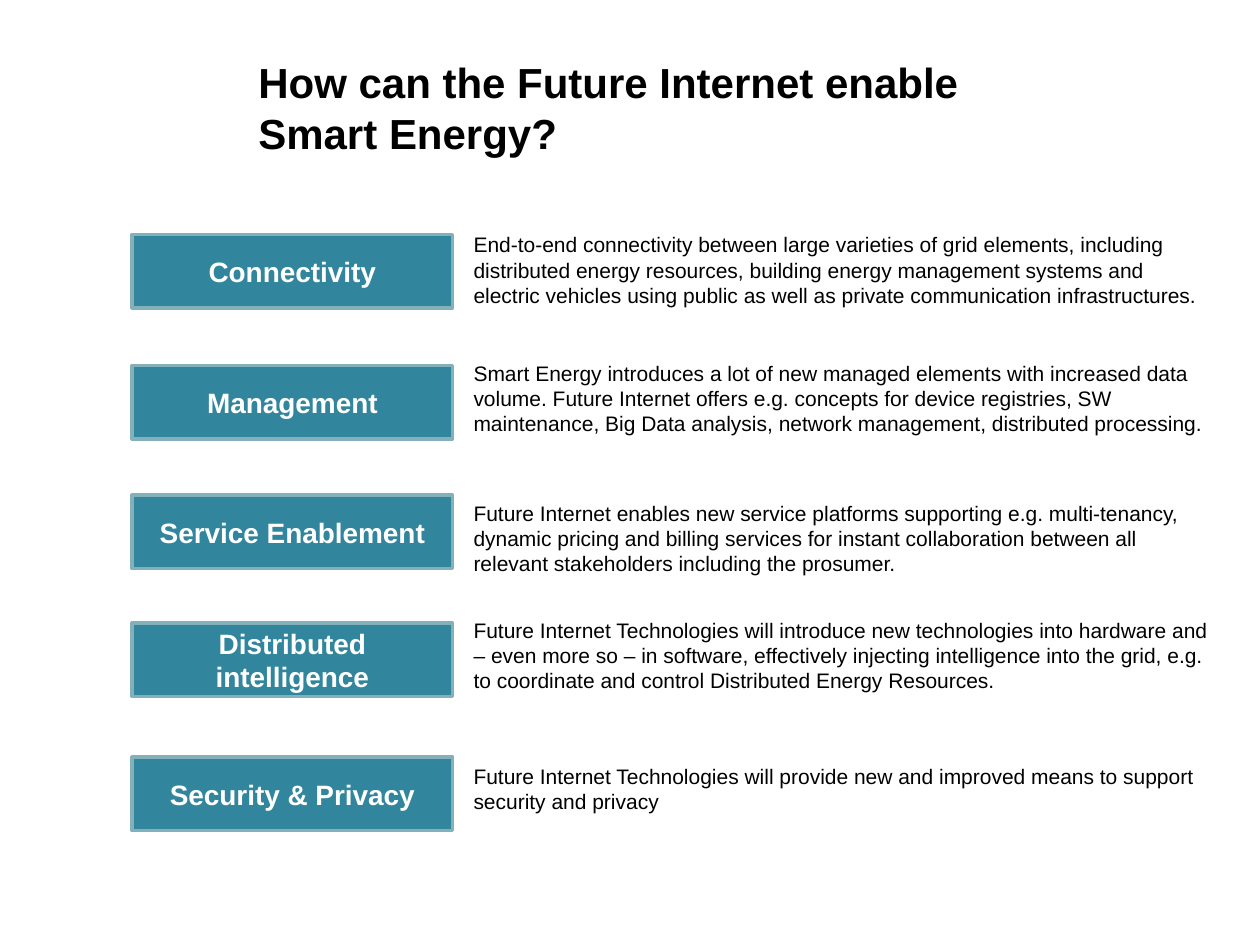
from pptx import Presentation
from pptx.dml.color import RGBColor
from pptx.enum.shapes import MSO_SHAPE
from pptx.enum.text import MSO_ANCHOR, MSO_AUTO_SIZE, PP_ALIGN
from pptx.util import Pt

RECTANGLE = MSO_SHAPE.RECTANGLE
TOP, MIDDLE = MSO_ANCHOR.TOP, MSO_ANCHOR.MIDDLE
LEFT, CENTER = PP_ALIGN.LEFT, PP_ALIGN.CENTER
GROW, FIXED = MSO_AUTO_SIZE.SHAPE_TO_FIT_TEXT, MSO_AUTO_SIZE.NONE

COLORS = {"text": "000000", "label": "FFFFFF", "fill": "31859C", "border": "84B0B9"}
FONT = "Arial"

TITLE = "How can the Future Internet enable Smart Energy?"
# label, label top, description, description top, description height
ENABLERS = [
    ("Connectivity", 134,
     "End-to-end connectivity between large varieties of grid elements, including "
     "distributed energy resources, building energy management systems and electric "
     "vehicles using public as well as private communication infrastructures.", 129, 51),
    ("Management", 208.8,
     "Smart Energy introduces a lot of new managed elements with increased data "
     "volume. Future Internet offers e.g. concepts for device registries, SW "
     "maintenance, Big Data analysis, network management, distributed processing.",
     202.4, 51),
    ("Service Enablement", 283,
     "Future Internet enables new service platforms supporting e.g. multi-tenancy, "
     "dynamic pricing and billing services for instant collaboration between all "
     "relevant stakeholders including the prosumer.", 282.2, 51),
    ("Distributed intelligence", 356,
     "Future Internet Technologies will introduce new technologies into hardware and "
     "– even more so – in software, effectively injecting intelligence into the grid, "
     "e.g. to coordinate and control Distributed Energy Resources.", 349.2, 51),
    ("Security & Privacy", 432.7,
     "Future Internet Technologies will provide new and improved means to support "
     "security and privacy", 432.7, 36),
]
LABEL_LEFT, LABEL_WIDTH, LABEL_HEIGHT = 75.6, 183, 42
DESCRIPTION_LEFT, DESCRIPTION_WIDTH = 263.5, 439


def color(name):
    return RGBColor.from_string(COLORS[name])


def write(shape, text, size, color_name, bold=False, align=LEFT, anchor=TOP, fit=FIXED):
    frame = shape.text_frame
    frame.word_wrap = True
    frame.auto_size = fit
    frame.vertical_anchor = anchor
    para = frame.paragraphs[0]
    para.alignment = align
    span = para.add_run()
    span.text = text
    span.font.name = FONT
    span.font.size = Pt(size)
    span.font.bold = bold
    span.font.color.rgb = color(color_name)


deck = Presentation()
deck.slide_width, deck.slide_height = Pt(720), Pt(540)
page = deck.slides.add_slide(deck.slide_layouts[5])

# Title
title = page.shapes.title
title.left, title.top, title.width, title.height = Pt(140.4), Pt(28.8), Pt(415.5), Pt(62.6)
write(title, TITLE, 24, "text", bold=True)

# One labelled box and its description per enabler
for label, label_top, description, description_top, description_height in ENABLERS:
    box = page.shapes.add_shape(RECTANGLE, Pt(LABEL_LEFT), Pt(label_top),
                                Pt(LABEL_WIDTH), Pt(LABEL_HEIGHT))
    box.shadow.inherit = False
    box.fill.solid()
    box.fill.fore_color.rgb = color("fill")
    box.line.color.rgb = color("border")
    box.line.width = Pt(2)
    write(box, label, 16, "label", bold=True, align=CENTER, anchor=MIDDLE)

    note = page.shapes.add_textbox(Pt(DESCRIPTION_LEFT), Pt(description_top),
                                   Pt(DESCRIPTION_WIDTH), Pt(description_height))
    write(note, description, 12, "text", fit=GROW)

deck.save("out.pptx")
